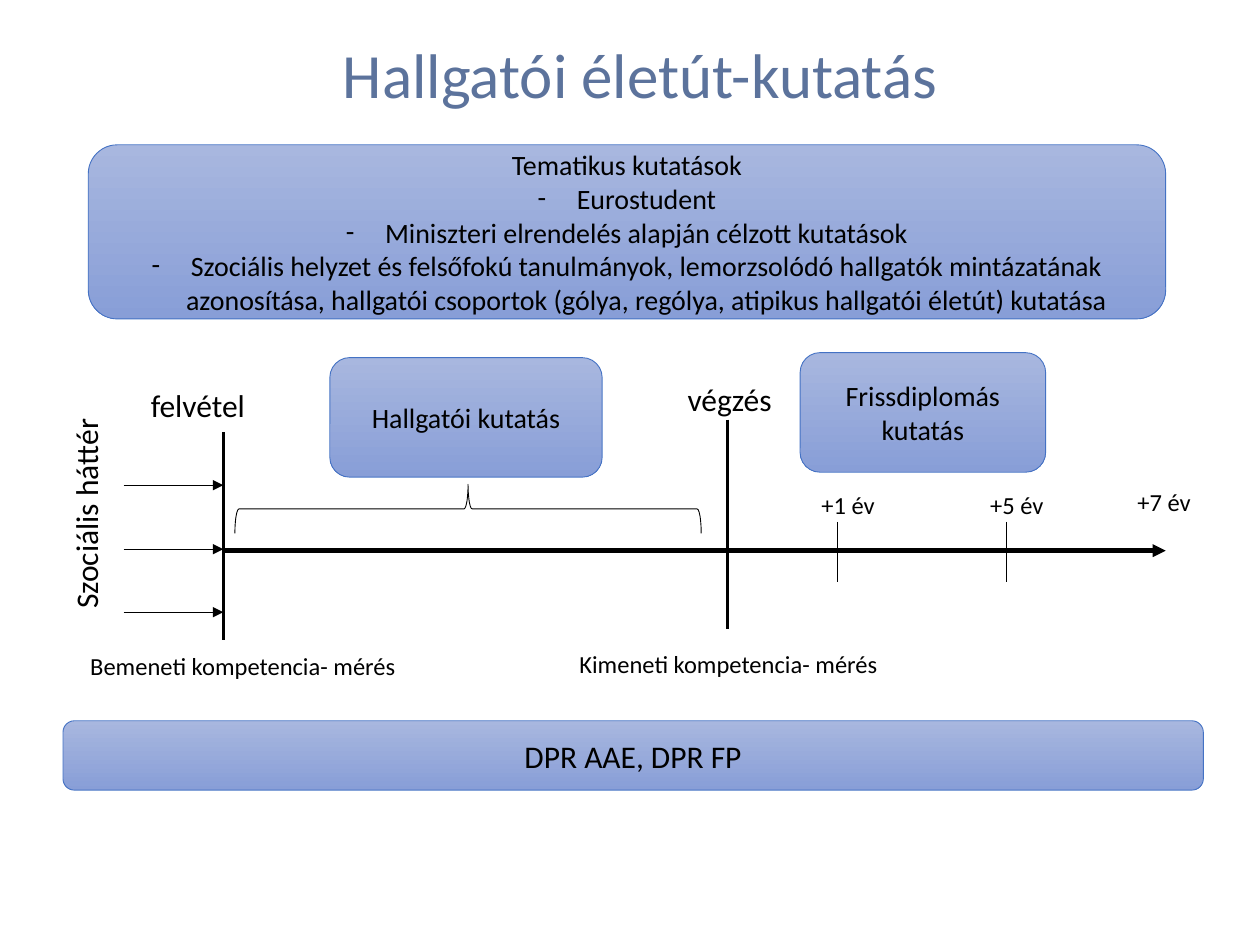
from lxml.etree import SubElement
from pptx import Presentation
from pptx.dml.color import RGBColor
from pptx.enum.shapes import MSO_CONNECTOR, MSO_SHAPE
from pptx.enum.text import MSO_ANCHOR, MSO_AUTO_SIZE, PP_ALIGN
from pptx.oxml.ns import qn
from pptx.util import Cm, Pt

COLORS = {
    "text": "000000",
    "title": "5C739C",
    "line": "000000",
    "border": "4472C4",
    "gradient_top": "A8B7DF",
    "gradient_bottom": "889ED7",
}
FONT = "Calibri"
TIMELINE_START, TIMELINE_END, TIMELINE_Y = 4.5, 23.5, 11.1


def color(name):
    """Return the named palette colour."""
    return RGBColor.from_string(COLORS[name])


def write(paragraph, text, size=16, fill="text", align=PP_ALIGN.CENTER, bullet=None):
    """Put formatted text in a paragraph, with an optional bullet."""
    paragraph.alignment = align
    if bullet:
        properties = paragraph._p.get_or_add_pPr()
        properties.set("marL", str(Cm(0.79)))
        properties.set("indent", str(-Cm(0.79)))
        SubElement(properties, qn("a:buFont")).set("typeface", FONT)
        SubElement(properties, qn("a:buChar")).set("char", bullet)
    run = paragraph.add_run()
    run.text = text
    run.font.name = FONT
    run.font.size = Pt(size)
    run.font.color.rgb = color(fill)


def add_title(slide, text):
    """Move and fill the title placeholder."""
    title = slide.shapes.title
    title.left, title.top, title.width, title.height = Cm(1.96), Cm(0.51), Cm(21.89), Cm(2.13)
    frame = title.text_frame
    frame.auto_size = MSO_AUTO_SIZE.NONE
    frame.vertical_anchor = MSO_ANCHOR.MIDDLE
    write(frame.paragraphs[0], text, size=36, fill="title")
    frame.paragraphs[0].line_spacing = 0.9


def add_box(slide, left, top, width, height, heading, items=(), size=16):
    """Add a rounded gradient box with a heading and dashed items."""
    shape = slide.shapes.add_shape(
        MSO_SHAPE.ROUNDED_RECTANGLE, Cm(left), Cm(top), Cm(width), Cm(height))
    shape.shadow.inherit = False
    shape.fill.gradient()
    shape.fill.gradient_angle = 270
    for stop, name in zip(shape.fill.gradient_stops, ("gradient_top", "gradient_bottom")):
        stop.color.rgb = color(name)
    shape.line.color.rgb = color("border")
    shape.line.width = Pt(0.5)
    frame = shape.text_frame
    frame.word_wrap = True
    frame.vertical_anchor = MSO_ANCHOR.MIDDLE
    write(frame.paragraphs[0], heading, size=size)
    for item in items:
        write(frame.add_paragraph(), item, size=size, bullet="-")


def add_label(slide, left, top, width, height, text, size=14, align=PP_ALIGN.LEFT, vertical=False):
    """Add a text label, optionally reading upwards."""
    label = slide.shapes.add_textbox(Cm(left), Cm(top), Cm(width), Cm(height))
    frame = label.text_frame
    frame.word_wrap = True
    if vertical:
        frame._txBody.bodyPr.set("vert", "vert270")
    write(frame.paragraphs[0], text, size=size, align=align)


def add_line(slide, start_x, start_y, end_x, end_y, width=0.5, arrow=False):
    """Add a straight line, optionally with an arrowhead at its end."""
    connector = slide.shapes.add_connector(
        MSO_CONNECTOR.STRAIGHT, Cm(start_x), Cm(start_y), Cm(end_x), Cm(end_y))
    connector.line.color.rgb = color("line")
    connector.line.width = Pt(width)
    if arrow:
        SubElement(connector.line._get_or_add_ln(), qn("a:tailEnd")).set("type", "triangle")
    SubElement(connector._element.spPr, qn("a:effectLst"))


def add_brace(slide, left, top, width, height):
    """Add a brace turned so that its point faces up."""
    brace = slide.shapes.add_shape(
        MSO_SHAPE.LEFT_BRACE, Cm(left), Cm(top), Cm(width), Cm(height))
    brace.rotation = 90
    brace.shadow.inherit = False
    brace.fill.background()
    brace.line.color.rgb = color("line")
    brace.line.width = Pt(0.5)


def add_timeline(slide):
    """Draw the timeline with its milestones, inputs and year marks."""
    add_line(slide, TIMELINE_START, TIMELINE_Y, TIMELINE_END, TIMELINE_Y, width=2.5, arrow=True)
    for x, top, bottom in ((TIMELINE_START, 8.71, 12.9), (14.66, 8.46, 12.67)):
        add_line(slide, x, top, x, bottom, width=1.75)
    for y in (9.78, 11.07, 12.34):
        add_line(slide, 2.49, y, TIMELINE_START, y, arrow=True)
    for x in (16.89, 20.29):
        add_line(slide, x, 10.52, x, 11.73)
    add_brace(slide, 8.94, 5.56, 0.99, 9.4)

    add_label(slide, 2.79, 7.65, 2.74, 1.02, "felvétel", size=18)
    add_label(slide, 13.21, 7.54, 3, 1.02, "végzés", size=18, align=PP_ALIGN.CENTER)
    add_label(slide, 1.22, 7.54, 1.27, 5.64, "Szociális háttér",
              size=18, align=PP_ALIGN.CENTER, vertical=True)
    add_label(slide, 1.57, 13, 6.88, 0.86, "Bemeneti kompetencia- mérés")
    add_label(slide, 11.43, 12.95, 8.26, 0.86, "Kimeneti kompetencia- mérés")
    for left, top, width, years in ((16.31, 9.75, 1.8, 1), (19.71, 9.75, 2.39, 5), (22.68, 9.7, 1.98, 7)):
        add_label(slide, left, top, width, 0.86, f"+{years} év")


def main():
    """Build and save the slide."""
    presentation = Presentation()
    presentation.slide_width, presentation.slide_height = Cm(25.4), Cm(19.05)
    slide = presentation.slides.add_slide(presentation.slide_layouts[5])
    add_title(slide, "Hallgatói életút-kutatás")
    add_timeline(slide)
    add_box(slide, 16.13, 7.11, 4.95, 2.41, "Frissdiplomás kutatás")
    add_box(slide, 6.65, 7.21, 5.49, 2.41, "Hallgatói kutatás")
    add_box(slide, 1.27, 14.53, 22.99, 1.4, "DPR AAE, DPR FP", size=18)
    add_box(slide, 1.78, 2.92, 21.72, 3.51, "Tematikus kutatások", (
        "Eurostudent",
        "Miniszteri elrendelés alapján célzott kutatások",
        "Szociális helyzet és felsőfokú tanulmányok, lemorzsolódó hallgatók mintázatának "
        "azonosítása, hallgatói csoportok (gólya, rególya, atipikus hallgatói életút) kutatása",
    ))
    presentation.save("out.pptx")


if __name__ == "__main__":
    main()
